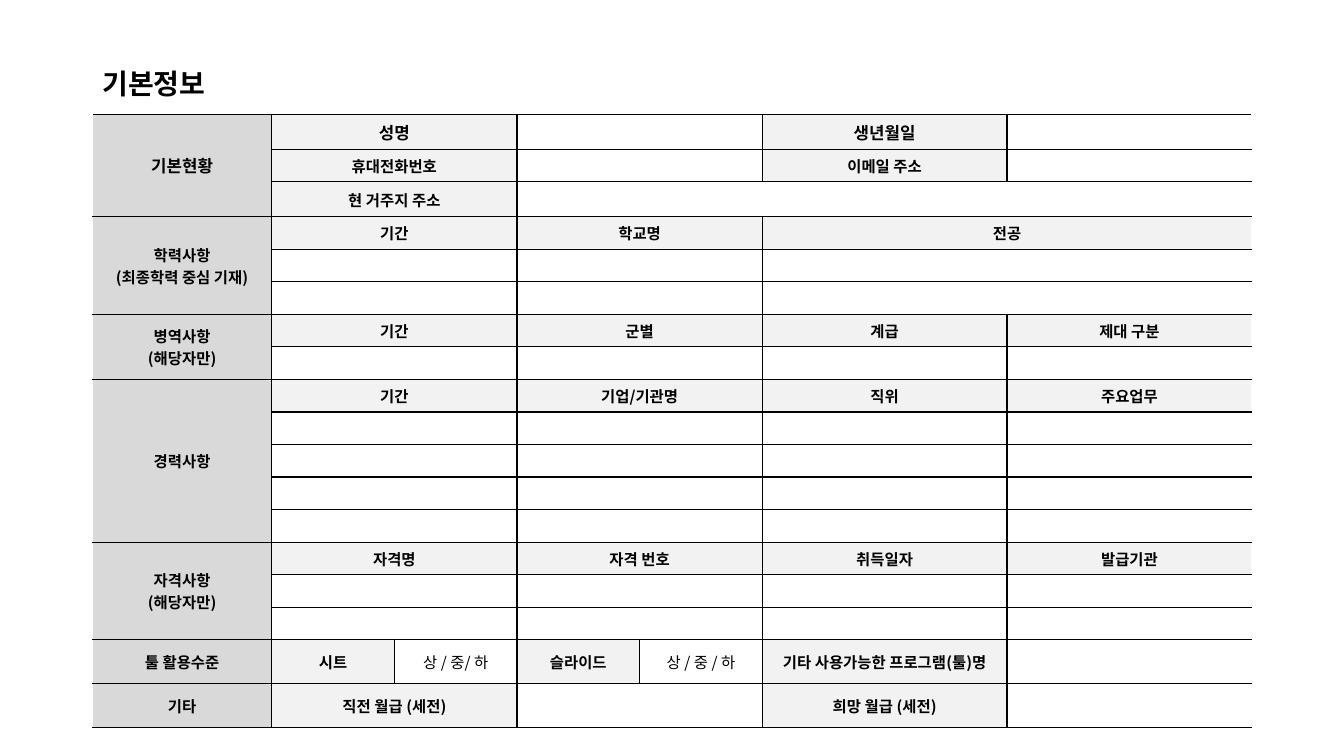
"""Build the basic information form as one slide with a merged table."""
import lxml.etree
import pptx
import pptx.dml.color
import pptx.enum.text
import pptx.oxml.ns
import pptx.util

Cm = pptx.util.Cm
qn = pptx.oxml.ns.qn
FONT = "Noto Sans CJK KR"
COLORS = {"ink": "000000", "paper": "FFFFFF", "section": "D9D9D9", "header": "F2F2F2"}

QUARTERS = [(1, 2), (3, 2), (5, 1), (6, 1)]
THIRDS = [(1, 2), (3, 2), (5, 2)]
HALVES = [(1, 2), (3, 4)]
SINGLES = [(column, 1) for column in range(1, 7)]
RATINGS = ["상 / 중/ 하", "상 / 중 / 하"]

SECTIONS = [
    (["기본현황"], [
        (QUARTERS, ["성명", "", "생년월일", ""]),
        (QUARTERS, ["휴대전화번호", "", "이메일 주소", ""]),
        (HALVES, ["현 거주지 주소", ""])]),
    (["학력사항", "(최종학력 중심 기재)"],
     [(THIRDS, ["기간", "학교명", "전공"])] + [(THIRDS, [""] * 3)] * 2),
    (["병역사항", "(해당자만)"],
     [(QUARTERS, ["기간", "군별", "계급", "제대 구분"]), (QUARTERS, [""] * 4)]),
    (["경력사항"],
     [(QUARTERS, ["기간", "기업/기관명", "직위", "주요업무"])] + [(QUARTERS, [""] * 4)] * 4),
    (["자격사항", "(해당자만)"],
     [(QUARTERS, ["자격명", "자격 번호", "취득일자", "발급기관"])] + [(QUARTERS, [""] * 4)] * 2),
    (["툴 활용수준"],
     [(SINGLES, ["시트", RATINGS[0], "슬라이드", RATINGS[1], "기타 사용가능한 프로그램(툴)명", ""])]),
    (["기타"], [(QUARTERS, ["직전 월급 (세전)", "", "희망 월급 (세전)", ""])]),
]


def write(para, text, size, bold=True):
    """Add one run, or set the size of an empty paragraph."""
    if text:
        span = para.add_run()
        span.text = text
        span.font.size = pptx.util.Pt(size)
        span.font.bold = bold
        span.font.color.rgb = pptx.dml.color.RGBColor.from_string(COLORS["ink"])
        properties = span.font._element
    else:
        properties = lxml.etree.SubElement(para._p, qn("a:endParaRPr"), sz=str(size * 100))
    for script in ("a:latin", "a:ea"):
        lxml.etree.SubElement(properties, qn(script), typeface=FONT)


def fill_cell(row, column, height, width, lines, size, shade=None, bold=True):
    """Merge, shade, border and write one cell of the form."""
    for down in range(height):
        for across in range(width):
            if down or across:
                write(form.cell(row + down, column + across).text_frame.paragraphs[0], "", 11)
    cell = form.cell(row, column)
    if height * width > 1:
        cell.merge(form.cell(row + height - 1, column + width - 1))
    cell.vertical_anchor = pptx.enum.text.MSO_ANCHOR.MIDDLE
    if shade:
        cell.fill.solid()
        cell.fill.fore_color.rgb = pptx.dml.color.RGBColor.from_string(COLORS[shade])
    else:
        cell.fill.background()
    for index, text in enumerate(lines):
        para = cell.text_frame.add_paragraph() if index else cell.text_frame.paragraphs[0]
        para.alignment = pptx.enum.text.PP_ALIGN.CENTER
        write(para, text, size, bold)
    outer = {"L": column == 0, "R": column + width == 7}
    for down in range(height):
        for across in range(width):
            properties = form.cell(row + down, column + across)._tc.get_or_add_tcPr()
            for index, side in enumerate("LRTB"):
                line = lxml.etree.Element(qn("a:ln" + side), w="12700")
                paint = lxml.etree.SubElement(line, qn("a:solidFill"))
                color = COLORS["paper" if outer.get(side) else "ink"]
                lxml.etree.SubElement(paint, qn("a:srgbClr"), val=color)
                properties.insert(index, line)


deck = pptx.Presentation()
deck.slide_width, deck.slide_height = Cm(33.87), Cm(19.05)
page = deck.slides.add_slide(deck.slide_layouts[6])

title = page.shapes.add_textbox(Cm(2.33), Cm(1.02), Cm(29.2), Cm(1.65)).text_frame
title.word_wrap = True
title.vertical_anchor = pptx.enum.text.MSO_ANCHOR.BOTTOM
title.paragraphs[0].line_spacing = 0.9
write(title.paragraphs[0], "기본정보", 20)

row_heights = [0.88, 0.82, 0.88] + [0.82] * 13 + [1.11] * 2
column_widths = [4.52] + [3.09] * 4 + [6.17] * 2
form = page.shapes.add_table(
    len(row_heights), len(column_widths), Cm(2.33), Cm(2.88),
    Cm(sum(column_widths)), Cm(sum(row_heights))).table
form.first_row = form.horz_banding = False
for form_row, height in zip(form.rows, row_heights):
    form_row.height = Cm(height)
for form_column, width in zip(form.columns, column_widths):
    form_column.width = Cm(width)

row = 0
for label, lines in SECTIONS:
    fill_cell(row, 0, len(lines), 1, label, 12 if row == 0 else 11, "section")
    for layout, texts in lines:
        for (column, width), text in zip(layout, texts):
            is_header = text != "" and text not in RATINGS
            size = 12 if row == 0 or (layout is HALVES and not text) else 11
            fill_cell(row, column, 1, width, [text], size,
                      "header" if is_header else None, is_header)
        row += 1

deck.save("out.pptx")
